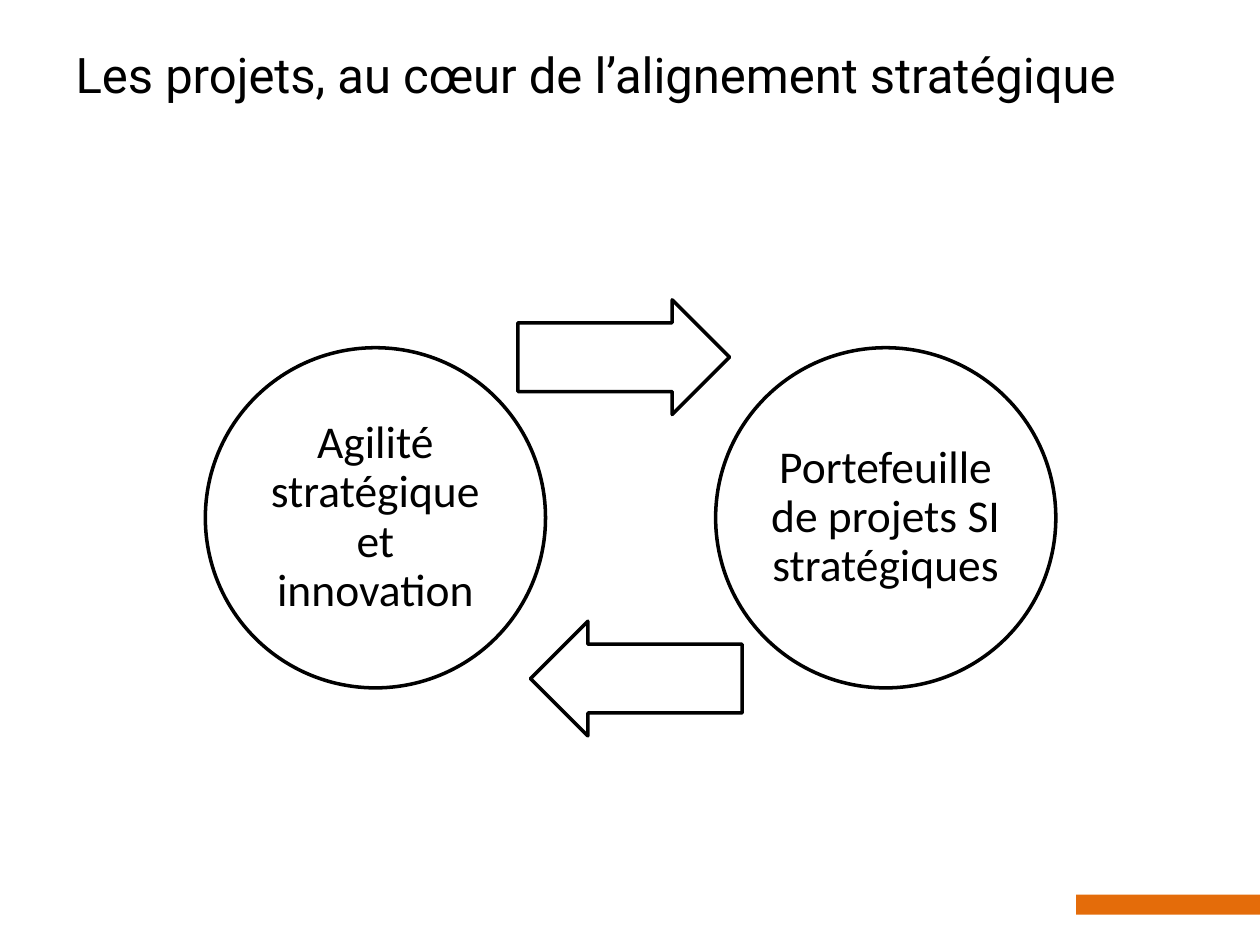
from dataclasses import dataclass

from pptx import Presentation
from pptx.dml.color import RGBColor
from pptx.enum.shapes import MSO_SHAPE as Shape
from pptx.enum.text import MSO_ANCHOR as Anchor, PP_ALIGN as Align
from pptx.util import Inches, Pt

BLACK = RGBColor(0x00, 0x00, 0x00)
ORANGE = RGBColor(0xE4, 0x6C, 0x0A)

CIRCLE_SIZE = 2.7
CIRCLE_TOP = 2.76
ARROW_WIDTH, ARROW_HEIGHT = 1.68, 0.91


@dataclass
class Circle:
    left: float
    text: str


@dataclass
class Arrow:
    left: float
    top: float
    rotation: int


CIRCLES = [
    Circle(1.63, "Agilité stratégique et innovation"),
    Circle(5.68, "Portefeuille de projets SI stratégiques"),
]
ARROWS = [Arrow(4.11, 2.38, 0), Arrow(4.21, 4.93, 180)]


def write_text(sp, text: str, *, size: int, font: str, align=Align.LEFT,
               anchor=Anchor.TOP, inset=(0.1, 0.05), spacing: float = 1.0) -> None:
    tf = sp.text_frame
    tf.word_wrap = True
    tf.vertical_anchor = anchor
    tf.margin_left = tf.margin_right = Inches(inset[0])
    tf.margin_top = tf.margin_bottom = Inches(inset[1])
    p = tf.paragraphs[0]
    p.alignment = align
    p.line_spacing = spacing
    r = p.add_run()
    r.text = text
    r.font.size = Pt(size)
    r.font.name = font
    r.font.color.rgb = BLACK


def add_outline(slide, kind, left: float, top: float, width: float, height: float):
    sp = slide.shapes.add_shape(
        kind, Inches(left), Inches(top), Inches(width), Inches(height))
    sp.shadow.inherit = False
    sp.fill.background()
    sp.line.color.rgb = BLACK
    sp.line.width = Pt(2)
    return sp


def add_circle(slide, circle: Circle) -> None:
    sp = add_outline(slide, Shape.OVAL, circle.left, CIRCLE_TOP, CIRCLE_SIZE, CIRCLE_SIZE)
    write_text(sp, circle.text, size=26, font="Calibri", align=Align.CENTER,
               anchor=Anchor.MIDDLE, inset=(0.04, 0.04), spacing=0.9)


def add_arrow(slide, arrow: Arrow) -> None:
    sp = add_outline(slide, Shape.RIGHT_ARROW, arrow.left, arrow.top,
                     ARROW_WIDTH, ARROW_HEIGHT)
    sp.adjustments[0] = 0.6
    sp.adjustments[1] = 0.5
    sp.rotation = arrow.rotation


def main() -> None:
    prs = Presentation()
    prs.slide_width, prs.slide_height = Inches(10), Inches(7.5)
    slide = prs.slides.add_slide(prs.slide_layouts[5])

    # Accent bar at the bottom right
    bar = slide.shapes.add_shape(
        Shape.RECTANGLE, Inches(8.54), Inches(7.1), Inches(1.46), Inches(0.16))
    bar.shadow.inherit = False
    bar.fill.solid()
    bar.fill.fore_color.rgb = ORANGE
    bar.line.fill.background()

    # Title
    title = slide.shapes.title
    title.left, title.top = Inches(0.5), Inches(0.3)
    title.width, title.height = Inches(9), Inches(1.25)
    write_text(title, "Les projets, au cœur de l’alignement stratégique",
               size=28, font="Roboto")

    # Cycle: each circle is followed by the arrow to the other
    for circle, arrow in zip(CIRCLES, ARROWS):
        add_circle(slide, circle)
        add_arrow(slide, arrow)

    prs.save("out.pptx")


if __name__ == "__main__":
    main()
